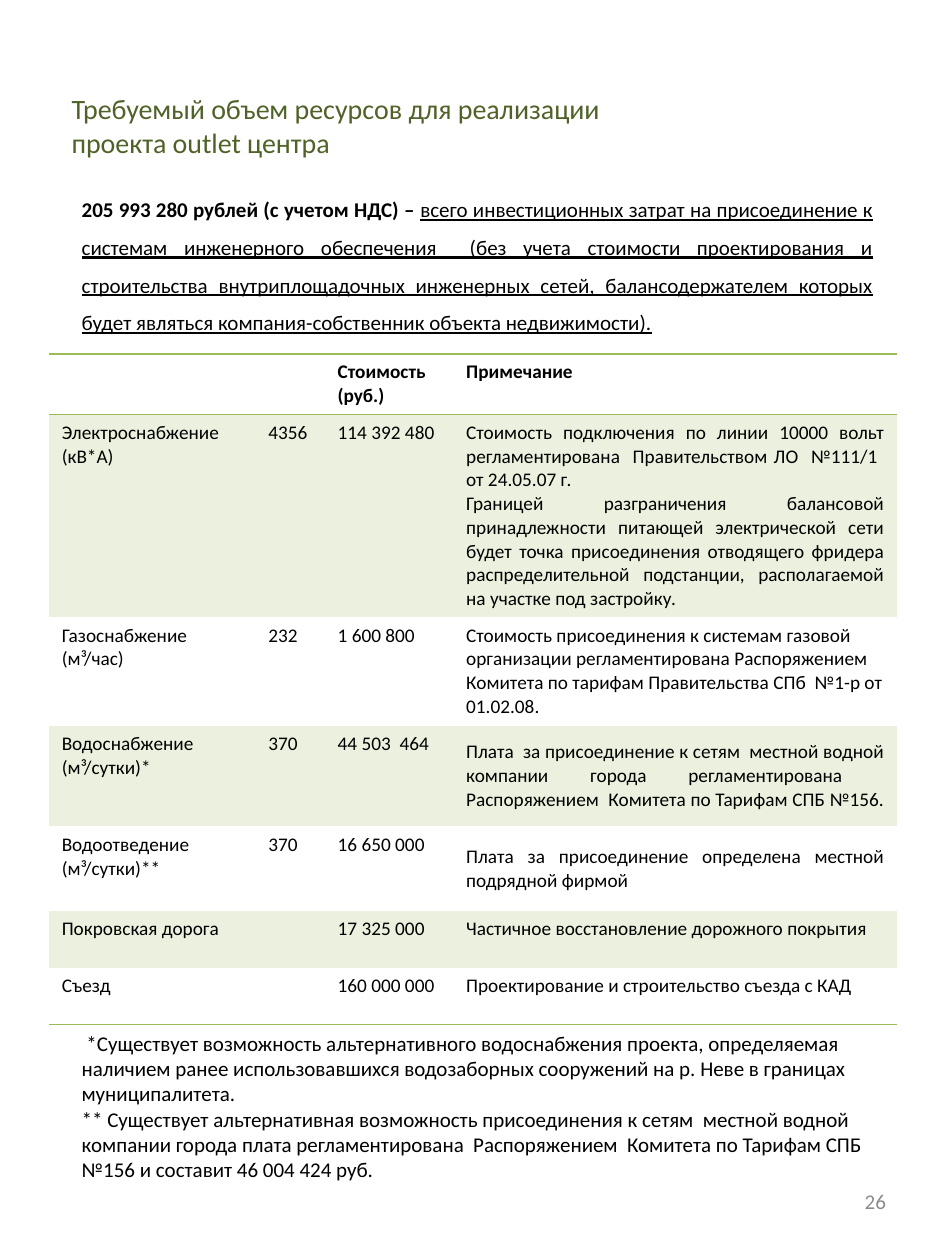
from dataclasses import dataclass

from lxml.etree import SubElement
from pptx import Presentation
from pptx.dml.color import RGBColor
from pptx.enum.text import MSO_ANCHOR as Anchor, PP_ALIGN as Align
from pptx.oxml.ns import qn
from pptx.util import Inches, Pt

BLACK = "000000"
GREEN = "9BBB59"
PALE_GREEN = "EBF1DE"
TITLE_GREEN = "4F6228"
GREY = "8C8C8C"
NO_STYLE = "{2D5ABB26-0587-4C30-8999-92F81FD0307C}"


@dataclass
class Block:
    left: float
    top: float
    width: float
    height: float
    paragraphs: list[str]
    size: int = 12
    color: str = BLACK
    align: Align = Align.LEFT
    anchor: Anchor = Anchor.TOP


@dataclass
class Resource:
    height: float
    name: str
    amount: str
    cost: str
    notes: list[str]
    align: Align = Align.LEFT
    anchor: Anchor = Anchor.TOP


TITLE = Block(0.47, 0.16, 5, 1.67,
              ["Требуемый объем ресурсов для реализации проекта outlet центра"],
              16, TITLE_GREEN, anchor=Anchor.MIDDLE)
SUMMARY = Block(0.55, 1.41, 6.48, 1.31, ["205 993 280 рублей (с учетом НДС) – "],
                align=Align.JUSTIFY)
SUMMARY_DETAIL = (
    "всего инвестиционных затрат на присоединение к системам инженерного обеспечения  "
    "(без учета стоимости проектирования и строительства внутриплощадочных инженерных сетей, "
    "балансодержателем которых будет являться компания-собственник объекта недвижимости)."
)
FOOTNOTES = Block(0.55, 8.13, 6.41, 1.51, [
    " *Существует возможность альтернативного водоснабжения проекта, определяемая наличием "
    "ранее использовавшихся водозаборных сооружений на р. Неве в границах муниципалитета.",
    "** Существует альтернативная возможность присоединения к сетям  местной водной "
    "компании города плата регламентирована  Распоряжением  Комитета по Тарифам "
    "СПБ №156 и составит 46 004 424 руб.",
])
PAGE_NUMBER = Block(5.38, 9.27, 1.75, 0.53, ["26"], 12, GREY, Align.RIGHT, Anchor.MIDDLE)

COLUMN_WIDTHS = [1.64, 0.55, 1.02, 3.52]
RESOURCES = [
    Resource(0.48, "", "", "Стоимость (руб.)", ["Примечание"]),
    Resource(1.61, "Электроснабжение (кВ*А)", "4356", "114 392 480", [
        "Стоимость подключения по линии 10000 вольт регламентирована  Правительством ЛО  "
        "№111/1  от 24.05.07 г.",
        "Границей разграничения балансовой принадлежности питающей электрической сети будет "
        "точка присоединения отводящего фридера распределительной подстанции, располагаемой "
        "на участке под застройку.",
    ], Align.JUSTIFY),
    Resource(0.86, "Газоснабжение (м³/час)", "232", "1 600 800", [
        "Стоимость присоединения к системам газовой организации регламентирована "
        "Распоряжением Комитета по тарифам Правительства СПб  №1-р от 01.02.08.",
    ]),
    Resource(0.8, "Водоснабжение (м³/сутки)*", "370", "44 503  464", [
        "Плата  за присоединение к сетям  местной водной компании города регламентирована  "
        "Распоряжением  Комитета по Тарифам СПБ №156. ",
    ], Align.JUSTIFY, Anchor.MIDDLE),
    Resource(0.67, "Водоотведение (м³/сутки)**", "370", "16 650 000",
             ["Плата за присоединение определена местной подрядной фирмой"],
             Align.JUSTIFY, Anchor.MIDDLE),
    Resource(0.45, "Покровская дорога", "", "17 325 000",
             ["Частичное восстановление дорожного покрытия"]),
    Resource(0.45, "Съезд", "", "160 000 000",
             ["Проектирование и строительство съезда с КАД"]),
]


def rgb(color: str) -> RGBColor:
    return RGBColor.from_string(color)


def write(frame, paragraphs: list[str], size: int, color: str, align: Align,
          bold: bool | None = None) -> None:
    for index, text in enumerate(paragraphs):
        para = frame.paragraphs[0] if index == 0 else frame.add_paragraph()
        para.text = text
        para.alignment = align
        para.font.name = "Calibri"
        para.font.size = Pt(size)
        para.font.bold = bold
        para.font.color.rgb = rgb(color)


def add_block(page, block: Block):
    box = page.shapes.add_textbox(Inches(block.left), Inches(block.top),
                                  Inches(block.width), Inches(block.height))
    frame = box.text_frame
    frame.word_wrap = True
    frame.vertical_anchor = block.anchor
    write(frame, block.paragraphs, block.size, block.color, block.align)
    return frame


def add_summary(page) -> None:
    para = add_block(page, SUMMARY).paragraphs[0]
    para.line_spacing = 1.5
    para.runs[0].font.bold = True
    span = para.add_run()
    span.text = SUMMARY_DETAIL
    span.font.underline = True


def add_border(cell, side: str) -> None:
    line = SubElement(cell._tc.get_or_add_tcPr(), qn(f"a:{side}"), w=str(Pt(1)))
    fill = SubElement(line, qn("a:solidFill"))
    SubElement(fill, qn("a:srgbClr"), val=GREEN)


def add_resource_table(page) -> None:
    last = len(RESOURCES) - 1
    frame = page.shapes.add_table(
        len(RESOURCES), len(COLUMN_WIDTHS), Inches(0.39), Inches(2.81),
        Inches(sum(COLUMN_WIDTHS)), Inches(sum(item.height for item in RESOURCES)))
    table = frame.table
    table.horz_banding = False
    table._tbl.tblPr.find(qn("a:tableStyleId")).text = NO_STYLE
    for column, width in zip(table.columns, COLUMN_WIDTHS):
        column.width = Inches(width)
    for index, (row, item) in enumerate(zip(table.rows, RESOURCES)):
        row.height = Inches(item.height)
        contents = [[item.name], [item.amount], [item.cost], item.notes]
        sides = {0: ["lnT", "lnB"], last: ["lnB"]}.get(index, [])
        for cell, paragraphs in zip(row.cells, contents):
            is_note = paragraphs is item.notes
            write(cell.text_frame, paragraphs, 11, BLACK,
                  item.align if is_note else Align.LEFT, index == 0)
            cell.vertical_anchor = item.anchor if is_note else Anchor.TOP
            for side in sides:
                add_border(cell, side)
            if index % 2:
                cell.fill.solid()
                cell.fill.fore_color.rgb = rgb(PALE_GREEN)
            else:
                cell.fill.background()


def main() -> None:
    deck = Presentation()
    deck.slide_width = Inches(7.5)
    deck.slide_height = Inches(10)
    page = deck.slides.add_slide(deck.slide_layouts[6])
    add_summary(page)
    add_block(page, TITLE)
    add_resource_table(page)
    add_block(page, FOOTNOTES)
    add_block(page, PAGE_NUMBER)
    deck.save("out.pptx")


if __name__ == "__main__":
    main()
